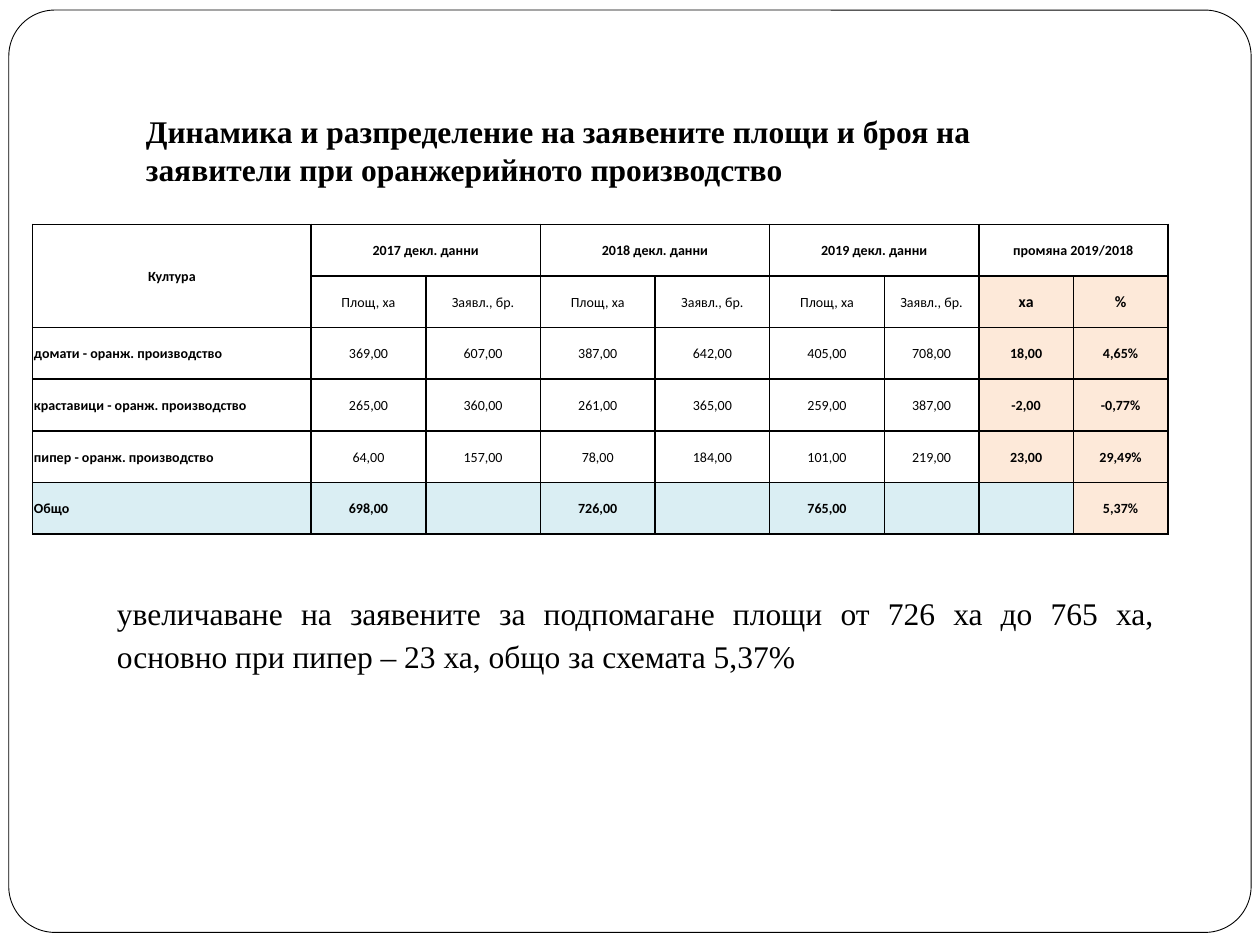
from lxml.etree import SubElement
from pptx import Presentation
from pptx.dml.color import RGBColor
from pptx.enum.shapes import MSO_SHAPE
from pptx.enum.text import MSO_ANCHOR, MSO_AUTO_SIZE, PP_ALIGN
from pptx.oxml.ns import qn
from pptx.util import Inches, Pt

COLORS = {"ink": "000000", "paper": "FFFFFF", "change": "FDE9D9", "total": "DAEEF3"}
COLUMN_WIDTHS = [2.21] + [0.91] * 5 + [0.75] * 3
ROW_HEIGHT = 0.41
PERIODS = ["2017 декл. данни", "2018 декл. данни", "2019 декл. данни", "промяна 2019/2018"]
ROWS = [
    ["Култура"] + [text for period in PERIODS for text in (period, "")],
    [""] + ["Площ, ха", "Заявл., бр."] * 3 + ["ха", "%"],
    ["домати - оранж. производство", "369,00", "607,00", "387,00", "642,00",
     "405,00", "708,00", "18,00", "4,65%"],
    ["краставици - оранж. производство", "265,00", "360,00", "261,00", "365,00",
     "259,00", "387,00", "-2,00", "-0,77%"],
    ["пипер - оранж. производство", "64,00", "157,00", "78,00", "184,00",
     "101,00", "219,00", "23,00", "29,49%"],
    ["Общо", "698,00", "", "726,00", "", "765,00", "", "", "5,37%"],
]
LAST_ROW = len(ROWS) - 1
LAST_COLUMN = len(COLUMN_WIDTHS) - 1
FIRST_CHANGE_COLUMN = LAST_COLUMN - 1


def color(name):
    return RGBColor.from_string(COLORS[name])


def style_font(paragraph, name, size, bold):
    paragraph.font.name = name
    paragraph.font.size = Pt(size)
    paragraph.font.bold = bold
    paragraph.font.color.rgb = color("ink")


def add_frame(slide):
    frame = slide.shapes.add_shape(
        MSO_SHAPE.ROUNDED_RECTANGLE, Inches(0.07), Inches(0.08), Inches(9.86), Inches(7.32))
    frame.adjustments[0] = 0.05
    frame.shadow.inherit = False
    frame.fill.solid()
    frame.fill.fore_color.rgb = color("paper")
    frame.line.color.rgb = color("ink")
    frame.line.width = Pt(0.5)


def add_text(slide, text, left, top, width, height, bold, alignment, line_spacing):
    box = slide.shapes.add_textbox(Inches(left), Inches(top), Inches(width), Inches(height))
    box.text_frame.word_wrap = True
    box.text_frame.auto_size = MSO_AUTO_SIZE.SHAPE_TO_FIT_TEXT
    paragraph = box.text_frame.paragraphs[0]
    paragraph.text = text
    paragraph.alignment = alignment
    paragraph.line_spacing = line_spacing
    style_font(paragraph, "Times New Roman", 18, bold)


def add_borders(cell):
    properties = cell._tc.get_or_add_tcPr()
    for side in ("lnL", "lnR", "lnT", "lnB"):
        line = SubElement(properties, qn(f"a:{side}"), w=str(Pt(1)))
        fill = SubElement(line, qn("a:solidFill"))
        SubElement(fill, qn("a:srgbClr"), val=COLORS["ink"])


def cell_fill(row, column):
    if row == LAST_ROW and column < LAST_COLUMN:
        return "total"
    if row > 0 and column >= FIRST_CHANGE_COLUMN:
        return "change"
    return None


def format_cell(cell, text, row, column):
    cell.vertical_anchor = MSO_ANCHOR.MIDDLE
    cell.margin_left = cell.margin_right = cell.margin_top = Inches(0.01)
    cell.margin_bottom = 0
    add_borders(cell)
    fill_name = cell_fill(row, column)
    if fill_name:
        cell.fill.solid()
        cell.fill.fore_color.rgb = color(fill_name)
    else:
        cell.fill.background()
    paragraph = cell.text_frame.paragraphs[0]
    paragraph.text = text
    is_label = column == 0 and row > 1
    paragraph.alignment = PP_ALIGN.LEFT if is_label else PP_ALIGN.CENTER
    bold = row in (0, LAST_ROW) or column == 0 or column >= FIRST_CHANGE_COLUMN
    size = 9 if row == 1 and column >= FIRST_CHANGE_COLUMN else 8
    style_font(paragraph, "Calibri", size, bold)


def add_crop_table(slide):
    table = slide.shapes.add_table(
        len(ROWS), len(COLUMN_WIDTHS), Inches(0.26), Inches(1.78),
        Inches(sum(COLUMN_WIDTHS)), Inches(ROW_HEIGHT * len(ROWS))).table
    table.first_row = False
    table.horz_banding = False
    for column, width in zip(table.columns, COLUMN_WIDTHS):
        column.width = Inches(width)
    for row in table.rows:
        row.height = Inches(ROW_HEIGHT)
    for row, texts in enumerate(ROWS):
        for column, text in enumerate(texts):
            format_cell(table.cell(row, column), text, row, column)
    table.cell(0, 0).merge(table.cell(1, 0))
    for column in range(1, LAST_COLUMN, 2):
        table.cell(0, column).merge(table.cell(0, column + 1))


def main():
    presentation = Presentation()
    presentation.slide_width = Inches(10)
    presentation.slide_height = Inches(7.5)
    slide = presentation.slides.add_slide(presentation.slide_layouts[6])
    add_frame(slide)
    add_text(slide, "Динамика и разпределение на заявените площи и броя на "
             "заявители при оранжерийното производство",
             1.06, 0.84, 7.4, 0.71, True, PP_ALIGN.LEFT, 1.0)
    add_crop_table(slide)
    add_text(slide, "увеличаване на заявените за подпомагане площи от 726 ха до 765 ха, "
             "основно при пипер – 23 ха, общо за схемата 5,37%",
             0.83, 4.62, 8.43, 0.8, False, PP_ALIGN.JUSTIFY, 1.15)
    presentation.save("out.pptx")


if __name__ == "__main__":
    main()
